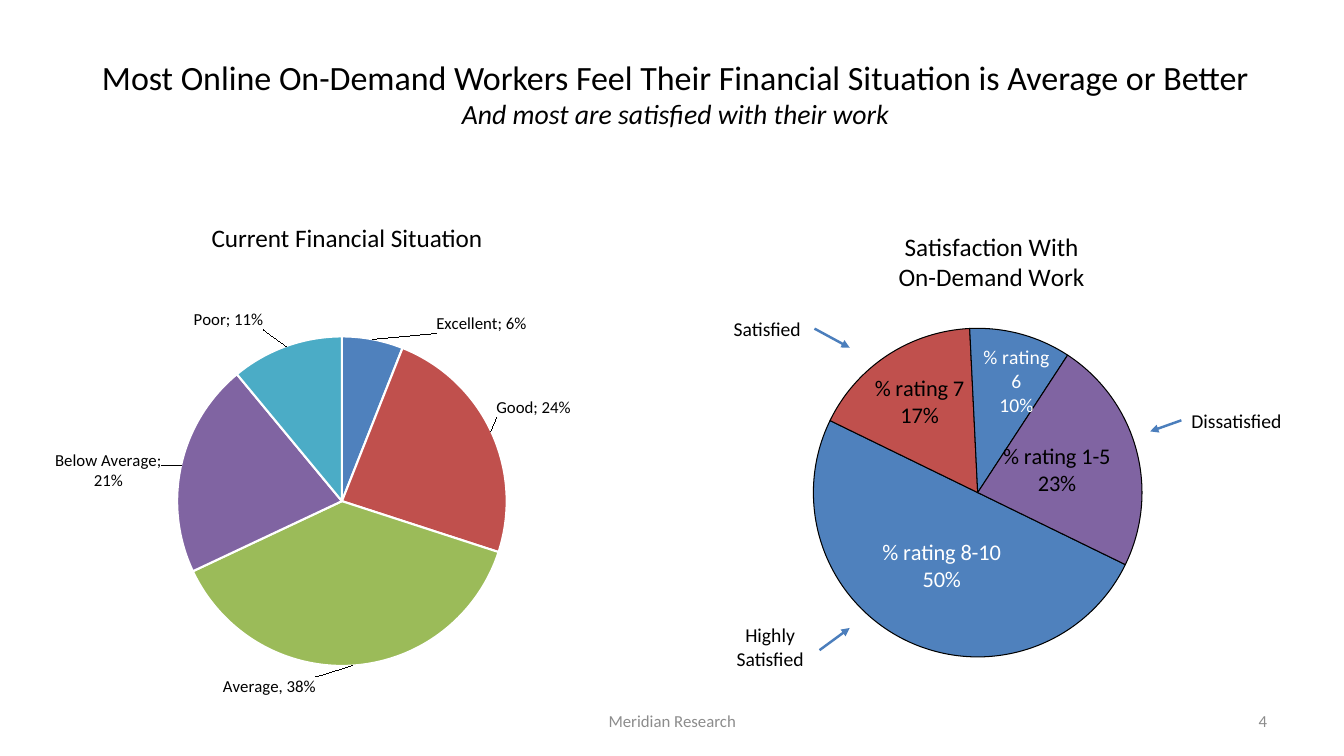
import lxml.etree
import pptx
import pptx.chart.data
import pptx.dml.color
import pptx.enum.chart
import pptx.enum.shapes
import pptx.enum.text
import pptx.oxml.ns
import pptx.util

RGBColor = pptx.dml.color.RGBColor
BLACK = RGBColor(0, 0, 0)
WHITE = RGBColor(255, 255, 255)
GRAY = RGBColor(0x8C, 0x8C, 0x8C)
ARROW = RGBColor(0x4B, 0x7E, 0xBC)
BLUE = RGBColor(0x4F, 0x81, 0xBD)
RED = RGBColor(0xC0, 0x50, 0x4D)
GREEN = RGBColor(0x9B, 0xBB, 0x59)
PURPLE = RGBColor(0x80, 0x64, 0xA2)
TEAL = RGBColor(0x4B, 0xAC, 0xC6)

FONT = "Calibri"
CELL = pptx.util.Inches(0.1)
ALIGN = pptx.enum.text.PP_ALIGN
LABEL_AT = pptx.enum.chart.XL_LABEL_POSITION


def cells(*counts):
    """Convert counts of grid cells to lengths."""
    return [round(count * CELL) for count in counts]


def style_font(font, size, color):
    """Set the face, size and colour of a font."""
    font.name = FONT
    font.size = pptx.util.Pt(size)
    font.color.rgb = color


def add_xml(parent, tag, **attributes):
    """Append a namespaced child element."""
    return lxml.etree.SubElement(parent, pptx.oxml.ns.qn(tag), attributes)


def set_layout(parent, index, **settings):
    """Give a chart part a manual layout."""
    for old in parent.findall(pptx.oxml.ns.qn("c:layout")):
        parent.remove(old)
    layout = add_xml(parent, "c:layout")
    manual = add_xml(layout, "c:manualLayout")
    for name, value in settings.items():
        add_xml(manual, f"c:{name}", val=str(value))
    parent.insert(index, layout)


def add_text(page, box, text, size, color=BLACK, align=ALIGN.LEFT, wrap=False):
    """Place a text box, vertically centred."""
    frame = page.shapes.add_textbox(*cells(*box)).text_frame
    frame.word_wrap = wrap
    frame.vertical_anchor = pptx.enum.text.MSO_ANCHOR.MIDDLE
    frame.text = text
    for para in frame.paragraphs:
        para.alignment = align
        for span in para.runs:
            style_font(span.font, size, color)


def add_arrow(page, start, end):
    """Draw an arrow between two grid points."""
    line = page.shapes.add_connector(
        pptx.enum.shapes.MSO_CONNECTOR.STRAIGHT, *cells(*start, *end))
    line.line.color.rgb = ARROW
    line.line.width = pptx.util.Pt(1.75)
    properties = line._element.spPr
    add_xml(properties.get_or_add_ln(), "a:tailEnd", type="triangle")
    add_xml(properties, "a:effectLst")


def add_pie(page, box, slices, plot, outline, position, separator, start):
    """Place a pie; slices hold name, value, fill, label size, colour, shift and own text."""
    data = pptx.chart.data.CategoryChartData(number_format="0%")
    data.categories = [part[0] for part in slices]
    data.add_series("Series 1", [part[1] for part in slices])
    chart = page.shapes.add_chart(
        pptx.enum.chart.XL_CHART_TYPE.PIE, *cells(*box), data).chart
    chart.has_legend = False
    chart.has_title = False
    style_font(chart.font, slices[0][3], BLACK)
    chart.plots[0].vary_by_categories = True
    series = chart.plots[0].series[0]
    labels = series.data_labels
    labels.number_format = "0%"
    labels.number_format_is_linked = False
    labels.position = position
    for index, (_, _, fill, size, color, _, text) in enumerate(slices):
        point = series.points[index]
        point.format.fill.solid()
        point.format.fill.fore_color.rgb = fill
        point.format.line.color.rgb = outline[0]
        point.format.line.width = pptx.util.Pt(outline[1])
        label = point.data_label
        if text:
            label.text_frame.text = text
            for para in label.text_frame.paragraphs:
                style_font(para.runs[0].font, size, color)
        else:
            style_font(label.font, size, color)
        label.position = position
    root = chart.element
    for node in root.xpath(".//c:dLbl | .//c:dLbls"):
        node.find(pptx.oxml.ns.qn("c:showCatName")).set("val", "1")
        mark = add_xml(node, "c:separator")
        mark.text = separator
        node.find(pptx.oxml.ns.qn("c:showBubbleSize")).addnext(mark)
    for node, part in zip(root.xpath(".//c:dLbl"), slices):
        set_layout(node, 1, x=part[5][0], y=part[5][1])
    left, top, width, height = plot
    set_layout(root.xpath(".//c:plotArea")[0], 0, layoutTarget="inner",
               xMode="edge", yMode="edge", x=left, y=top, w=width, h=height)
    pie = root.xpath(".//c:pieChart")[0]
    for old in pie.findall(pptx.oxml.ns.qn("c:firstSliceAng")):
        pie.remove(old)
    add_xml(pie, "c:firstSliceAng", val=str(start))
    return chart


def add_heading(page, box):
    """Fill the title placeholder with heading and subheading."""
    title = page.shapes.title
    title.left, title.top, title.width, title.height = cells(*box)
    frame = title.text_frame
    frame.text = ("Most Online On-Demand Workers Feel Their Financial Situation is "
                  "Average or Better\vAnd most are satisfied with their work")
    frame.vertical_anchor = pptx.enum.text.MSO_ANCHOR.MIDDLE
    para = frame.paragraphs[0]
    para.alignment = ALIGN.CENTER
    for span, size in zip(para.runs, (24.3, 19.8)):
        style_font(span.font, size, BLACK)
    para.runs[1].font.italic = True


def add_finances(page, box):
    """Place the financial situation pie and its caption."""
    slices = [
        ("Excellent", 0.06, BLUE, 12, BLACK, (0.09, 0), None),
        ("Good", 0.24, RED, 12, BLACK, (0, -0.02), None),
        ("Average", 0.38, GREEN, 12, BLACK, (-0.12, 0.01), "Average, 38%"),
        ("Below Average", 0.21, PURPLE, 12, BLACK, (-0.02, 0.05), None),
        ("Poor", 0.11, TEAL, 12, BLACK, (-0.03, -0.02), None)]
    add_pie(page, box, slices, (0.22, 0.3, 0.52, 0.61), (WHITE, 1.5),
            LABEL_AT.OUTSIDE_END, "; ", 0)
    add_text(page, (box[0] + 19.1, box[1] + 4.3, 29.2, 4),
             "Current Financial Situation", 18)


def add_satisfaction(page, box):
    """Place the satisfaction pie with its title and callouts."""
    slices = [
        ("% rating 8-10", 0.5, BLUE, 16, WHITE, (0, 0), None),
        ("% rating 7", 0.17, RED, 16, BLACK, (-0.03, -0.04), None),
        ("% rating 6", 0.1, BLUE, 14, WHITE, (0.04, -0.06), "% rating\n6\n10%"),
        ("% rating 1-5", 0.23, PURPLE, 16, BLACK, (0, 0), None)]
    chart = add_pie(page, box, slices, (0.1, 0.24, 0.76, 0.73), (BLACK, 0.75),
                    LABEL_AT.CENTER, "\n", 116)
    frame = chart.chart_title.text_frame
    frame.text = "Satisfaction With\nOn-Demand Work"
    for para in frame.paragraphs:
        style_font(para.runs[0].font, 18, BLACK)
        para.runs[0].font.bold = False
    set_layout(chart.element.xpath(".//c:title")[0], 1,
               xMode="edge", yMode="edge", x=0.29, y=0.1)
    left, top = box[:2]
    callouts = [
        ("Highly\nSatisfied", (-4.4, 44, 8.8, 5.7), (4.9, 47.2), (7.9, 45), ALIGN.CENTER),
        ("Satisfied", (-4.6, 13.6, 8.8, 3.4), (4.4, 15.3), (7.9, 17.2), ALIGN.LEFT),
        ("Dissatisfied", (40.8, 22.7, 11.1, 3.4), (40.8, 24.4), (37.7, 25.5), ALIGN.LEFT)]
    for text, place, start, end, align in callouts:
        add_text(page, (left + place[0], top + place[1], *place[2:]), text, 14, align=align)
        add_arrow(page, (left + start[0], top + start[1]), (left + end[0], top + end[1]))


def add_footer(page, box):
    """Place the source name and the page number."""
    left, top, width, height = box
    add_text(page, (left, top, 42.2, height), "Meridian Research", 12, GRAY,
             ALIGN.CENTER, True)
    add_text(page, (left + width - 31.1, top, 31.1, height), "4", 12, GRAY,
             ALIGN.RIGHT, True)


def main():
    """Build the deck."""
    deck = pptx.Presentation()
    deck.slide_width, deck.slide_height = cells(133.33, 75)
    page = deck.slides.add_slide(deck.slide_layouts[5])
    add_heading(page, (3.5, 3, 127, 12.5))
    add_finances(page, (0.9, 17.3, 68.8, 53.6))
    add_satisfaction(page, (76.4, 17.3, 42.9, 52.2))
    add_footer(page, (45.6, 69.5, 81.1, 4))
    deck.save("out.pptx")


if __name__ == "__main__":
    main()
